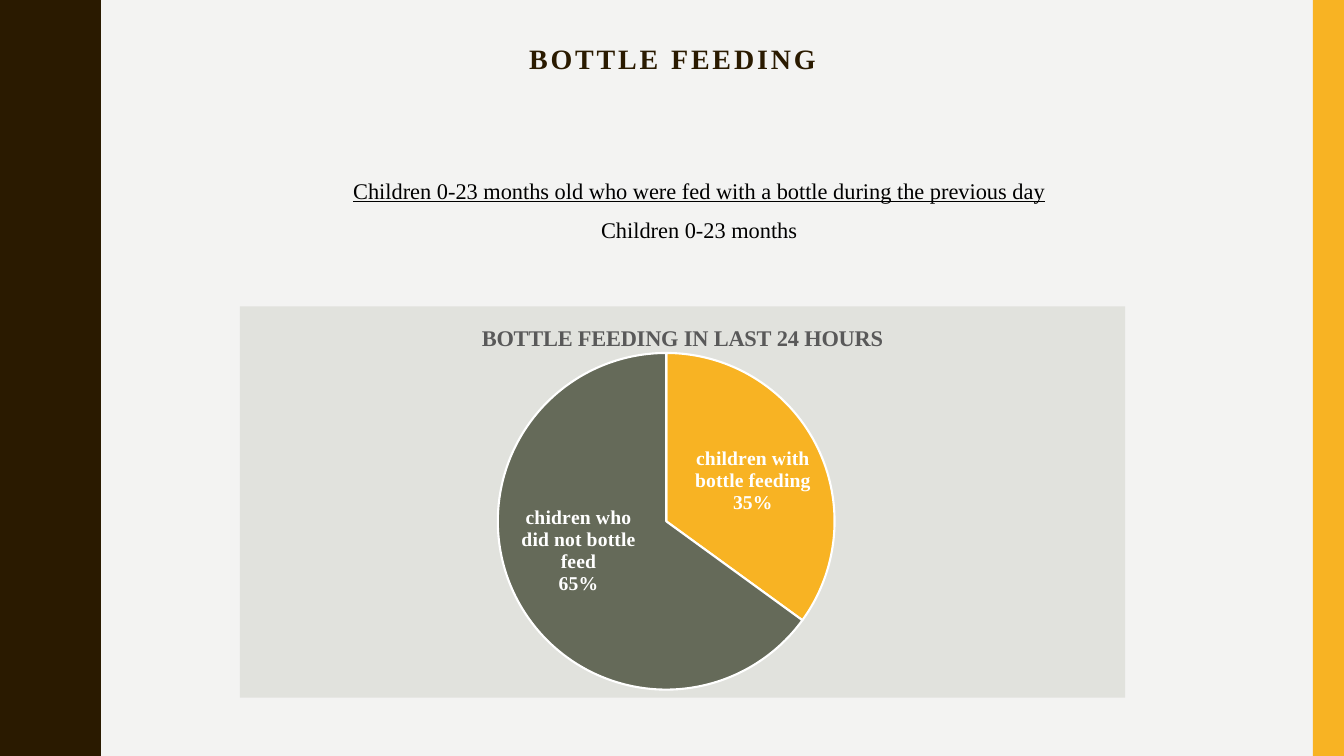
from lxml.etree import SubElement
from pptx import Presentation
from pptx.chart.data import CategoryChartData
from pptx.dml.color import RGBColor
from pptx.enum.chart import XL_CHART_TYPE, XL_LABEL_POSITION
from pptx.enum.shapes import MSO_SHAPE
from pptx.enum.text import PP_ALIGN
from pptx.oxml.ns import qn
from pptx.util import Inches, Pt

# Content
TITLE = "BOTTLE FEEDING"
RATIO = ["Children 0-23 months old who were fed with a bottle during the previous day",
         "Children 0-23 months"]
HEAD = "BOTTLE FEEDING IN LAST 24 HOURS"
SHARES = {"children with bottle feeding": 35, "chidren who did not bottle feed": 65}

# Look
FONT = "Times New Roman"
PAPER = RGBColor(0xF3, 0xF3, 0xF2)
BROWN = RGBColor(0x2A, 0x1A, 0x00)
GOLD = RGBColor(0xF8, 0xB3, 0x23)
OLIVE = RGBColor(0x65, 0x6A, 0x59)
PANEL = RGBColor(0xE1, 0xE2, 0xDD)
GREY = RGBColor(0x59, 0x59, 0x59)
BLACK = RGBColor(0, 0, 0)
WHITE = RGBColor(0xFF, 0xFF, 0xFF)

# Half of one wave of the left edge: x, y
WAVE = 1.5
CURVE = [(0.78, 0), (0.78, 0.07), (0.79, 0.14), (0.8, 0.2), (0.81, 0.25),
         (0.83, 0.29), (0.85, 0.33), (0.87, 0.38), (0.89, 0.42), (0.91, 0.46),
         (0.93, 0.5), (0.95, 0.55), (0.96, 0.61), (0.97, 0.68), (0.97, 0.75)]
# Plot area as shares of the chart
PLOT = {"x": 0.275, "y": 0.119, "w": 0.413, "h": 0.861}

deck = Presentation()
deck.slide_width, deck.slide_height = Inches(13.33), Inches(7.5)
slide = deck.slides.add_slide(deck.slide_layouts[6])
slide.background.fill.solid()
slide.background.fill.fore_color.rgb = PAPER


def paint(shape, color):
    shape.shadow.inherit = False
    shape.fill.solid()
    shape.fill.fore_color.rgb = color
    shape.line.fill.background()


def style(font, size, color, bold=False):
    font.name, font.size, font.bold = FONT, Pt(size), bold
    font.color.rgb = color


def write(box, lines, size, color, bold, space, gap):
    frame = slide.shapes.add_textbox(*map(Inches, box)).text_frame
    frame.word_wrap = True
    frame.text = "\n".join(lines)
    for para in frame.paragraphs:
        para.alignment = PP_ALIGN.CENTER
        para.line_spacing, para.space_before = space, Pt(gap)
        style(para.font, size, color, bold)
    return frame.paragraphs


# Wavy left edge and right bar
full = CURVE + [(x, WAVE - y) for x, y in CURVE[-2::-1]]
edge = [(x, y + n * WAVE) for n in range(5) for x, y in full]
form = slide.shapes.build_freeform(0, 0, scale=Inches(1))
form.add_line_segments(edge + [(0, 7.5)], close=True)
paint(form.convert_to_shape(), BROWN)
bar = slide.shapes.add_shape(MSO_SHAPE.RECTANGLE, Inches(13.02), 0,
                             Inches(0.31), Inches(7.5))
paint(bar, GOLD)

# Title and ratio
title = write((0.92, 0.4, 11.5, 0.97), [TITLE], 20, BROWN, True, 0.9, 0)[0]
title.runs[0].font._element.set("spc", "200")
ratio = write((1.37, 1.68, 11.13, 1.2), RATIO, 16, BLACK, False, 1.1, 7)
ratio[0].font.underline = True

# Pie chart
data = CategoryChartData()
data.categories = list(SHARES)
data.add_series("Series 1", list(SHARES.values()))
chart = slide.shapes.add_chart(XL_CHART_TYPE.PIE, Inches(2.38), Inches(3.04),
                               Inches(8.78), Inches(3.88), data).chart
chart.has_legend = False
style(chart.font, 10, BLACK)
chart.has_title = True
chart.chart_title.include_in_layout = False
head = chart.chart_title.text_frame
head.text = HEAD
style(head.paragraphs[0].font, 16, GREY, True)

pie = chart.plots[0]
pie.vary_by_categories = True
for n, color in enumerate([GOLD, OLIVE]):
    part = pie.series[0].points[n].format
    part.fill.solid()
    part.fill.fore_color.rgb = color
    part.line.color.rgb = WHITE
    part.line.width = Pt(1.5)

pie.has_data_labels = True
tags = pie.data_labels
tags.show_category_name = tags.show_percentage = True
tags.show_value = False
tags.position = XL_LABEL_POSITION.INSIDE_END
style(tags.font, 14, WHITE, True)

# Chart panel fill and plot place
space = chart._chartSpace
back = space.makeelement(qn("c:spPr"))
fill = SubElement(back, qn("a:solidFill"))
SubElement(fill, qn("a:srgbClr"), val=str(PANEL))
SubElement(SubElement(back, qn("a:ln")), qn("a:noFill"))
space.find(qn("c:chart")).addnext(back)

area = space.find(".//" + qn("c:plotArea"))
for old in area.findall(qn("c:layout")):
    area.remove(old)
place = area.makeelement(qn("c:layout"))
area.insert(0, place)
spot = SubElement(place, qn("c:manualLayout"))
SubElement(spot, qn("c:layoutTarget"), val="inner")
for axis in "xy":
    SubElement(spot, qn(f"c:{axis}Mode"), val="edge")
for name, share in PLOT.items():
    SubElement(spot, qn(f"c:{name}"), val=str(share))

deck.save("out.pptx")
